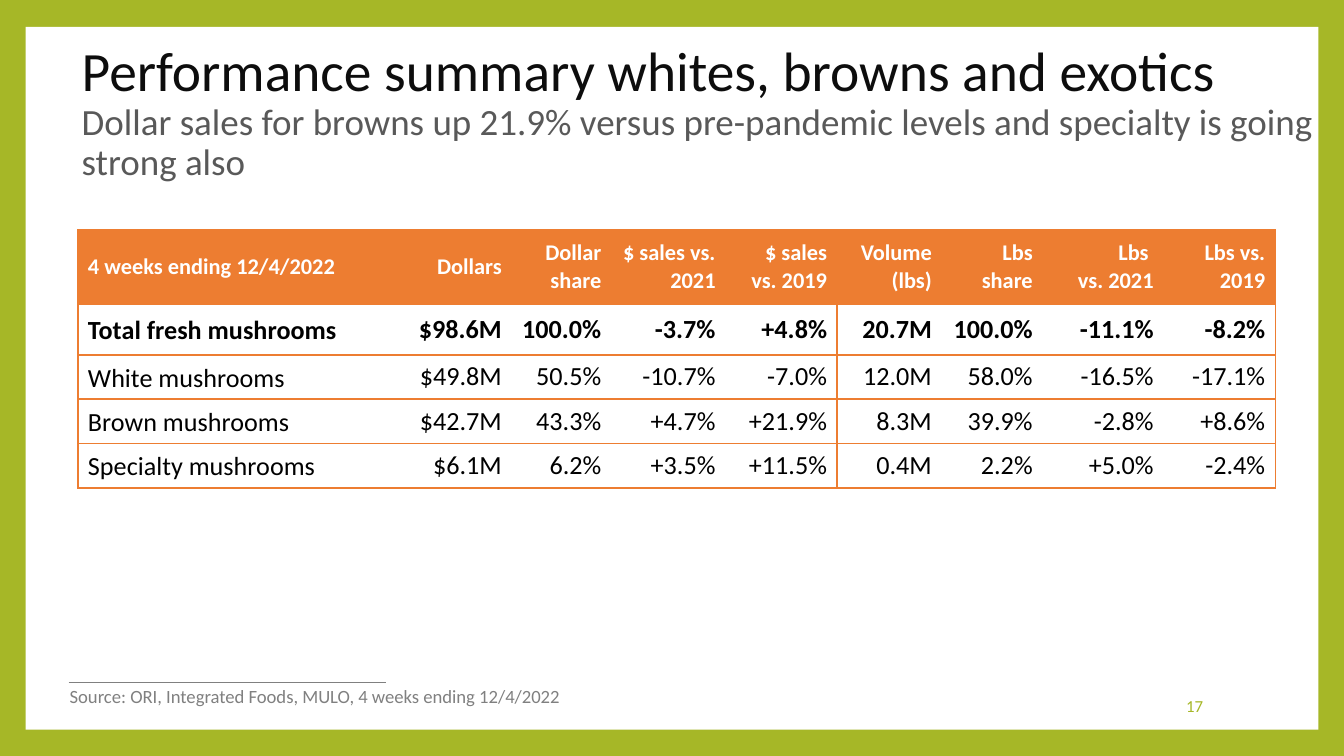
from lxml import etree
from pptx import Presentation, util as u
from pptx.dml.color import RGBColor
from pptx.enum import shapes, text
from pptx.oxml.ns import qn

GREEN, ORANGE, GRAY, WHITE = "A6B727", "ED7D31", "808080", "FFFFFF"
LEFT, RIGHT = text.PP_ALIGN.LEFT, text.PP_ALIGN.RIGHT
MID = text.MSO_ANCHOR.MIDDLE
PLAIN = "{2D5ABB26-0587-4C30-8999-92F81FD0307C}"  # table style without grid

COLS = [2.37, 0.86, 0.74, 0.85, 0.83, 0.78, 0.75, 0.9, 0.83]
ROWS = [0.55, 0.38, 0.33, 0.33, 0.33]
SPLIT = 5  # first volume column
DATA = [
    ["4 weeks ending 12/4/2022", "Dollars", "Dollar share", "$ sales vs. 2021",
     "$ sales vs. 2019", "Volume (lbs)", "Lbs\nshare", "Lbs \vvs. 2021", "Lbs vs. 2019"],
    ["Total fresh mushrooms", "$98.6M", "100.0%", "-3.7%", "+4.8%",
     "20.7M", "100.0%", "-11.1%", "-8.2%"],
    ["White mushrooms", "$49.8M", "50.5%", "-10.7%", "-7.0%",
     "12.0M", "58.0%", "-16.5%", "-17.1%"],
    ["Brown mushrooms", "$42.7M", "43.3%", "+4.7%", "+21.9%",
     "8.3M", "39.9%", "-2.8%", "+8.6%"],
    ["Specialty mushrooms", "$6.1M", "6.2%", "+3.5%", "+11.5%",
     "0.4M", "2.2%", "+5.0%", "-2.4%"],
]


def tint(color, code):
    color.rgb = RGBColor.from_string(code)


def paint(fill, code):
    fill.solid()
    tint(fill.fore_color, code)


def style(font, size, code, bold=False):
    for key, val in {"name": "Calibri", "size": u.Pt(size), "bold": bold}.items():
        setattr(font, key, val)
    tint(font.color, code)


def label(slide, box, runs, align=LEFT, anchor=MID, wrap=True):
    """Add one paragraph; each run (words, size, colour) takes a new line."""
    frame = slide.shapes.add_textbox(*map(u.Inches, box)).text_frame
    frame.word_wrap, frame.vertical_anchor = wrap, anchor
    para = frame.paragraphs[0]
    para.alignment = align
    for i, (words, size, code) in enumerate(runs):
        if i:
            para.add_line_break()
        run = para.add_run()
        run.text = words
        style(run.font, size, code)
    return para


def border(cell, sides):
    """Draw the given sides and switch the others off."""
    props = cell._tc.get_or_add_tcPr()
    for side in "LRTB":
        line = etree.SubElement(props, qn("a:ln" + side), w=str(u.Pt(1)))
        if side in sides:
            fill = etree.SubElement(line, qn("a:solidFill"))
            etree.SubElement(fill, qn("a:srgbClr"), val=ORANGE)
        else:
            etree.SubElement(line, qn("a:noFill"))


def panel(slide, box):
    paint(slide.background.fill, GREEN)
    rect = slide.shapes.add_shape(shapes.MSO_SHAPE.RECTANGLE, *map(u.Inches, box))
    rect.shadow.inherit = False
    paint(rect.fill, WHITE)
    rect.line.fill.background()


def heading(slide, box):
    para = label(slide, box, [
        ("Performance summary whites, browns and exotics", 29.7, "0D0D0D"),
        ("Dollar sales for browns up 21.9% versus pre-pandemic levels "
         "and specialty is going strong also", 19.8, "595959")])
    para.line_spacing = 0.9


def sales(slide, box):
    table = slide.shapes.add_table(len(ROWS), len(COLS), *map(u.Inches, box)).table
    table.first_row = table.horz_banding = False
    table._tbl.tblPr.find(qn("a:tableStyleId")).text = PLAIN
    for col, width in zip(table.columns, COLS):
        col.width = u.Inches(width)
    for row, height in zip(table.rows, ROWS):
        row.height = u.Inches(height)
    for r, line in enumerate(DATA):
        for c, words in enumerate(line):
            cell = table.cell(r, c)
            # Outer frame, row rules and the dollar/volume divider
            left = "L" if c in (0, SPLIT) else ""
            right = "R" if c in (SPLIT - 1, len(COLS) - 1) else ""
            border(cell, left + right + "TB")
            if r == 0:
                paint(cell.fill, ORANGE)
            else:
                cell.fill.background()
            look = {"text": words, "vertical_anchor": MID,
                    "margin_left": u.Pt(5.4), "margin_right": u.Pt(5.4),
                    "margin_top": 0, "margin_bottom": 0}
            for key, val in look.items():
                setattr(cell, key, val)
            for para in cell.text_frame.paragraphs:
                para.alignment = RIGHT if c else LEFT
                if r and not c:
                    para.line_spacing = 1.07
                size, code = (14, "000000") if r else (12, WHITE)
                for run in para.runs:
                    style(run.font, size, code, bold=r < 2)


def footer(slide, box):
    x, y, w, h = box
    # Rule above the source
    rule = slide.shapes.add_connector(
        shapes.MSO_CONNECTOR.STRAIGHT, u.Inches(x + 0.09), u.Inches(y + 0.03),
        u.Inches(x + 2.45), u.Inches(y + 0.03))
    tint(rule.line.color, GRAY)
    rule.line.width = u.Pt(0.79)
    etree.SubElement(rule._element.spPr, qn("a:effectLst"))
    # Source and page number
    label(slide, (x, y, 3.92, 0.27),
          [("Source: ORI, Integrated Foods, MULO, 4 weeks ending 12/4/2022", 10, GRAY)],
          anchor=text.MSO_ANCHOR.TOP, wrap=False)
    label(slide, (x + w - 1.4, y + h - 0.3, 1.4, 0.3), [("17", 9, GREEN)], RIGHT)


def main():
    deck = Presentation()
    deck.slide_width = u.Inches(10)
    deck.slide_height = deck.slide_width * 9 // 16
    slide = deck.slides.add_slide(deck.slide_layouts[6])
    panel(slide, (0.19, 0.2, 9.62, 5.23))
    heading(slide, (0.51, 0.45, 9.37, 0.79))
    sales(slide, (0.58, 1.71, sum(COLS), sum(ROWS)))
    footer(slide, (0.42, 5.05, 8.63, 0.35))
    deck.save("out.pptx")


if __name__ == "__main__":
    main()
